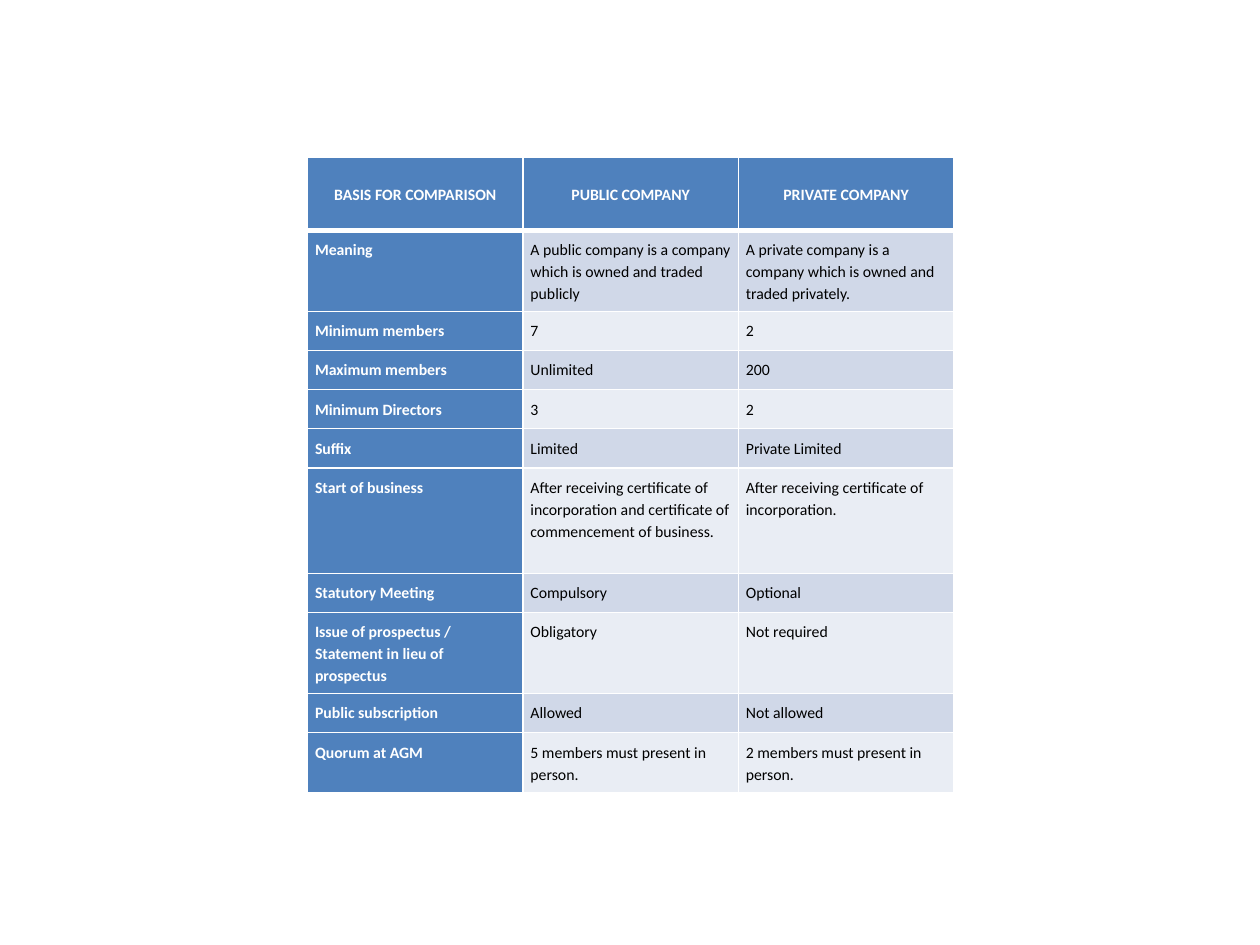
from lxml.etree import SubElement
from pptx import Presentation
from pptx.dml.color import RGBColor
from pptx.enum.text import MSO_ANCHOR, PP_ALIGN
from pptx.oxml.ns import qn
from pptx.util import Inches, Pt

COLORS = {
    "blue": "4F81BD",
    "band_dark": "D0D8E8",
    "band_light": "E9EDF4",
    "white": "FFFFFF",
    "black": "000000",
}
COLUMN_WIDTH = 1.71
MARGIN = Inches(0.06)

# Row height in inches, then the three cell texts
ROWS = [
    (0.58, "BASIS FOR COMPARISON", "PUBLIC COMPANY", "PRIVATE COMPANY"),
    (0.5, "Meaning",
     "A public company is a company which is owned and traded publicly",
     "A private company is a company which is owned and traded privately."),
    (0.31, "Minimum members", "7", "2"),
    (0.31, "Maximum members", "Unlimited", "200"),
    (0.31, "Minimum Directors", "3", "2"),
    (0.31, "Suffix", "Limited", "Private Limited"),
    (0.84, "Start of business",
     "After receiving certificate of incorporation and certificate of "
     "commencement of business.",
     "After receiving certificate of incorporation."),
    (0.31, "Statutory Meeting", "Compulsory", "Optional"),
    (0.5, "Issue of prospectus / Statement in lieu of prospectus",
     "Obligatory", "Not required"),
    (0.31, "Public subscription", "Allowed", "Not allowed"),
    (0.48, "Quorum at AGM", "5 members must present in person.",
     "2 members must present in person."),
]


def add_borders(cell, widths):
    """Draw white cell borders; widths maps each side (L, R, T, B) to points."""
    properties = cell._tc.get_or_add_tcPr()
    for position, (side, width) in enumerate(widths.items()):
        line = SubElement(properties, qn(f"a:ln{side}"), w=str(Pt(width)))
        properties.insert(position, line)  # borders come before the fill
        fill = SubElement(line, qn("a:solidFill"))
        SubElement(fill, qn("a:srgbClr"), val=COLORS["white"])


presentation = Presentation()
presentation.slide_width = Inches(10)
presentation.slide_height = Inches(7.5)
slide = presentation.slides.add_slide(presentation.slide_layouts[6])

table = slide.shapes.add_table(
    len(ROWS), 3, Inches(2.44), Inches(1.25),
    Inches(3 * COLUMN_WIDTH), Inches(sum(row[0] for row in ROWS)),
).table
table.first_col = True
for column in table.columns:
    column.width = Inches(COLUMN_WIDTH)

for row_index, (height, *texts) in enumerate(ROWS):
    table.rows[row_index].height = Inches(height)
    is_header = row_index == 0
    band = "band_dark" if row_index % 2 else "band_light"
    for column_index, text in enumerate(texts):
        is_heading = is_header or column_index == 0
        cell = table.cell(row_index, column_index)
        cell.margin_left = cell.margin_right = MARGIN
        cell.margin_top = cell.margin_bottom = MARGIN
        cell.vertical_anchor = MSO_ANCHOR.MIDDLE if is_header else MSO_ANCHOR.TOP
        cell.fill.solid()
        cell.fill.fore_color.rgb = RGBColor.from_string(
            COLORS["blue" if is_heading else band])
        add_borders(cell, {"L": 1, "R": 1, "T": 3 if row_index == 1 else 1,
                           "B": 3 if is_header else 1})

        paragraph = cell.text_frame.paragraphs[0]
        paragraph.alignment = PP_ALIGN.CENTER if is_header else PP_ALIGN.LEFT
        paragraph.line_spacing = 1.15
        paragraph.space_after = Pt(12)
        run = paragraph.add_run()
        run.text = text
        run.font.name = "Calibri"
        run.font.size = Pt(9)
        run.font.bold = is_heading
        run.font.color.rgb = RGBColor.from_string(
            COLORS["white" if is_heading else "black"])

presentation.save("out.pptx")
